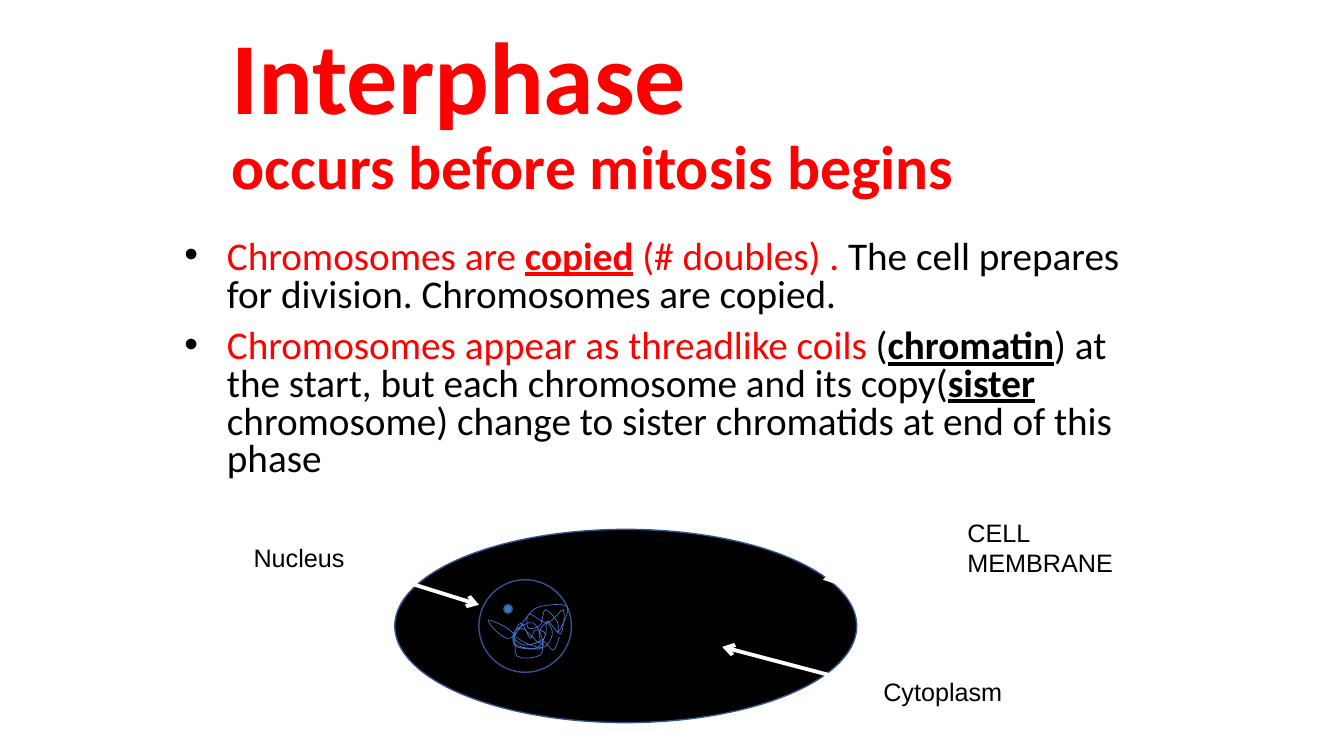
from dataclasses import dataclass
from lxml.etree import SubElement
from pptx import Presentation
from pptx.dml.color import RGBColor
from pptx.enum.shapes import MSO_CONNECTOR, MSO_SHAPE
from pptx.enum.text import MSO_ANCHOR, MSO_AUTO_SIZE, PP_ALIGN
from pptx.oxml.ns import qn
from pptx.util import Cm, Pt


@dataclass(frozen=True)
class Theme:
    red: str = "FF0000"
    black: str = "000000"
    white: str = "FFFFFF"
    blue: str = "4472C4"
    navy: str = "325491"
    head: str = "Calibri"
    sans: str = "Arial"
    big: int = 73
    sub: int = 44
    body: int = 28
    label: int = 18
    thin: float = 0.5
    edge: float = 1
    arrow: float = 2.75


T = Theme()
PAGE = (33.87, 19.05)
TITLE = [("Interphase ", T.big), ("occurs before mitosis begins", T.sub)]
TITLE_BOX = (4.23, 0.42, 25.4, 4.94)
BODY_BOX = (4.23, 5.93, 25.4, 6.98)
BODY = [
    [
        ("Chromosomes are ", T.red, False),
        ("copied", T.red, True),
        (" (# doubles) . ", T.red, False),
        ("The cell prepares for division. Chromosomes are copied.", T.black, False),
    ],
    [
        ("Chromosomes appear as threadlike coils ", T.red, False),
        ("(", T.black, False),
        ("chromatin", T.black, True),
        (") at the start, but each chromosome and its copy(", T.black, False),
        ("sister", T.black, True),
        (" chromosome) change to sister chromatids at end of this phase", T.black, False),
    ],
]
CELL = (MSO_SHAPE.OVAL, (9.95, 13.34, 11.64, 4.87), T.black)
NUCLEUS = (MSO_SHAPE.FLOWCHART_CONNECTOR, (12.07, 14.61, 2.33, 2.33), None)
DOT = (MSO_SHAPE.FLOWCHART_CONNECTOR, (12.7, 15.24, 0.21, 0.21), T.blue)
LABELS = [
    ("CELL MEMBRANE", (24.13, 12.91, 5.5, 1.8), True, (23.92, 13.76, 20.74, 14.61)),
    ("Nucleus", (6.14, 13.55, 2.82, 1.02), False, (8.68, 14.18, 12.07, 15.24)),
    ("Cytoplasm", (22.01, 16.93, 3.53, 1.02), False, (22.23, 17.36, 18.2, 16.3)),
]
STRAND_AT = (12.27, 15.24)
STRAND_UNIT = 0.0254
STRAND = [
    (29, 32), (41, 39), (57, 42), (65, 29), (60, 18), (52, 26),
    (52, 38), (34, 23), (27, 40), (49, 44), (56, 38), (46, 18),
    (28, 26), (28, 39), (49, 43), (58, 29), (48, 25), (43, 33),
    (34, 18), (27, 32), (38, 40), (57, 33), (60, 16), (73, 29),
    (76, 5), (60, 18), (42, 9), (41, 23), (53, 20), (58, 5),
    (70, 17), (71, 27), (80, 2), (52, 2), (39, 13), (24, 33),
    (9, 26), (2, 15), (26, 28), (30, 51), (53, 50), (56, 36),
    (66, 45), (72, 32),
]


def lens(box):
    return [Cm(v) for v in box]


def rgb(code):
    return RGBColor.from_string(code)


def add_run(para, text, size, face, color, bold=False, under=False):
    run = para.add_run()
    run.text = text
    font = run.font
    font.size, font.name = Pt(size), face
    font.bold, font.underline = bold, under
    font.color.rgb = rgb(color)


def paint(shape, fill, line, width):
    shape.shadow.inherit = False
    if fill:
        shape.fill.solid()
        shape.fill.fore_color.rgb = rgb(fill)
    else:
        shape.fill.background()
    shape.line.color.rgb = rgb(line)
    shape.line.width = Pt(width)


def add_title(slide):
    title = slide.shapes.title
    title.left, title.top, title.width, title.height = lens(TITLE_BOX)
    frame = title.text_frame
    frame.word_wrap, frame.auto_size = True, MSO_AUTO_SIZE.NONE
    frame.vertical_anchor = MSO_ANCHOR.MIDDLE
    para = frame.paragraphs[0]
    para.alignment, para.line_spacing = PP_ALIGN.LEFT, 0.9
    props = para._p.get_or_add_pPr()
    props.set("marL", str(Cm(1.35)))
    props.set("indent", "0")
    for i, (text, size) in enumerate(TITLE):
        if i:
            para.add_line_break()
        add_run(para, text, size, T.head, T.red, True)


def add_body(slide):
    frame = slide.shapes.add_textbox(*lens(BODY_BOX)).text_frame
    frame.word_wrap = True
    for i, runs in enumerate(BODY):
        para = frame.add_paragraph() if i else frame.paragraphs[0]
        para.line_spacing, para.space_before = 0.8, Pt(10)
        props = para._p.get_or_add_pPr()
        props.set("marL", str(Cm(1.24)))
        props.set("indent", str(Cm(-1.07)))
        tint = SubElement(props, qn("a:buClr"))
        SubElement(tint, qn("a:srgbClr"), val=T.black)
        SubElement(props, qn("a:buFont"), typeface=T.sans)
        SubElement(props, qn("a:buChar"), char="•")
        for text, color, key in runs:
            add_run(para, text, T.body, T.head, color, key, key)


def add_round(slide, kind, box, fill):
    paint(slide.shapes.add_shape(kind, *lens(box)), fill, T.navy, T.edge)


def blend(a, b, c, d, t):
    return b + t * (c - a + t * (2 * a - 5 * b + 4 * c - d + t * (3 * (b - c) + d - a))) / 2


def trace(knots, steps=4):
    ends = [knots[0], *knots, knots[-1]]
    for group in zip(ends, ends[1:], ends[2:], ends[3:]):
        for n in range(1, steps + 1):
            yield tuple(blend(*axis, n / steps) for axis in zip(*group))


def add_strand(slide):
    unit = Cm(STRAND_UNIT)
    x, y = STRAND[0]
    pen = slide.shapes.build_freeform(x * unit, y * unit)
    pen.add_line_segments([(x * unit, y * unit) for x, y in trace(STRAND)], close=False)
    paint(pen.convert_to_shape(*lens(STRAND_AT)), None, T.blue, T.thin)


def add_label(slide, text, box, wrap, ends):
    line = slide.shapes.add_connector(MSO_CONNECTOR.STRAIGHT, *lens(ends))
    line.line.color.rgb = rgb(T.white)
    line.line.width = Pt(T.arrow)
    props = line._element.spPr
    SubElement(props.find(qn("a:ln")), qn("a:tailEnd"), type="arrow")
    SubElement(props, qn("a:effectLst"))
    frame = slide.shapes.add_textbox(*lens(box)).text_frame
    frame.word_wrap, frame.auto_size = wrap, MSO_AUTO_SIZE.SHAPE_TO_FIT_TEXT
    add_run(frame.paragraphs[0], text, T.label, T.sans, T.black)


def main():
    deck = Presentation()
    deck.slide_width, deck.slide_height = lens(PAGE)
    slide = deck.slides.add_slide(deck.slide_layouts[5])
    add_title(slide)
    add_body(slide)
    add_round(slide, *CELL)
    add_round(slide, *NUCLEUS)
    add_strand(slide)
    add_round(slide, *DOT)
    for label in LABELS:
        add_label(slide, *label)
    deck.save("out.pptx")


if __name__ == "__main__":
    main()
